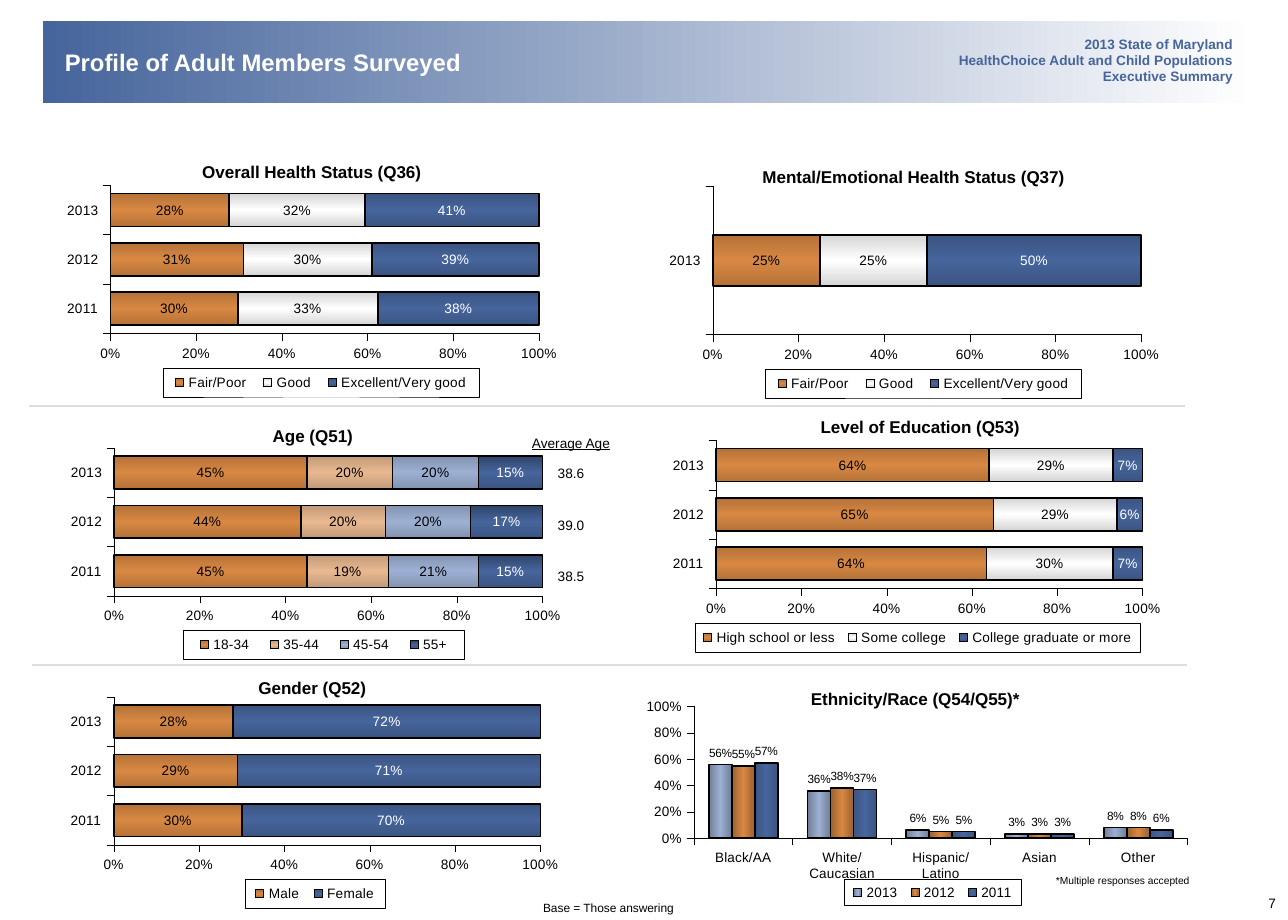
from dataclasses import dataclass
from lxml import etree
from pptx import Presentation
from pptx.chart.data import CategoryChartData
from pptx.dml.color import RGBColor
from pptx.enum.chart import XL_CHART_TYPE as ChartType, XL_LABEL_POSITION as LabelPosition
from pptx.enum.chart import XL_LEGEND_POSITION as LegendPosition, XL_TICK_MARK as TickMark
from pptx.enum.shapes import MSO_CONNECTOR as Connector, MSO_SHAPE as ShapeKind
from pptx.enum.text import MSO_ANCHOR as Anchor, PP_ALIGN as Align
from pptx.oxml import parse_xml
from pptx.oxml.ns import nsdecls, qn
from pptx.util import Inches, Pt


@dataclass(frozen=True)
class Theme:
    font: str = "Arial"
    black: str = "000000"
    white: str = "FFFFFF"
    blue: str = "46659C"
    rule: str = "DDDDDD"
    orange: tuple = ("B57238", "D88843", "B57238")
    burnt: tuple = ("9B6130", "D88843", "9B6130")
    peach: tuple = ("C29A78", "E8B890", "C29A78")
    silver: tuple = ("D5D5D5", "FFFFFF", "D5D5D5")
    sky: tuple = ("8393B0", "9DB0D3", "8393B0")
    slate: tuple = ("707E97", "9DB0D3", "707E97")
    navy: tuple = ("3B5482", "46659C", "3B5482")
    deep: tuple = ("2E4367", "46659C", "3B5482")
    title: int = 14
    heading: int = 10
    body: int = 8
    small: int = 7
    note: int = 6


theme = Theme()
presentation = Presentation()
presentation.slide_width, presentation.slide_height = Inches(10.5), Inches(7.5)
slide = presentation.slides.add_slide(presentation.slide_layouts[6])
column, row = presentation.slide_width / 105, presentation.slide_height / 75


def area(left, top, width, height):
    return [round(size) for size in (left * column, top * row, width * column, height * row)]


def paint_gradient(fill, properties, colors, angle):
    fill.gradient()
    gradient = properties.find(qn("a:gradFill"))
    stops = gradient.find(qn("a:gsLst"))
    stops.clear()
    for index, color in enumerate(colors):
        stop = etree.SubElement(stops, qn("a:gs"), pos=str(index * 100000 // (len(colors) - 1)))
        etree.SubElement(stop, qn("a:srgbClr"), val=color)
    gradient.find(qn("a:lin")).set("ang", str(angle * 60000))


banner = slide.shapes.add_shape(ShapeKind.RECTANGLE, *area(3.5, 1.7, 98.9, 6.7))
banner.shadow.inherit = False
banner.line.fill.background()
paint_gradient(banner.fill, banner._element.spPr, (theme.blue, theme.white), 0)

years = ("2011", "2012", "2013")
health_names = ("Fair/Poor", "Good", "Excellent/Very good")
three_tones = (theme.orange, theme.silver, theme.navy)
standard_plot = (0.12, 0.006, 0.82, 0.686)
charts = [
    ((53.3, 35.8, 42.4), years, 50, standard_plot, (0.079, 0.852, 0.857, 0.134),
     ("High school or less", "Some college", "College graduate or more"), three_tones,
     ((0.64, 0.65, 0.64), (0.3, 0.29, 0.29), (0.07, 0.06, 0.07))),
    ((4.2, 36.4, 42.6), years, 50, standard_plot, (0.253, 0.852, 0.536, 0.134),
     ("18-34", "35-44", "45-54", "55+"), (theme.orange, theme.peach, theme.sky, theme.deep),
     ((0.45, 0.44, 0.45), (0.19, 0.2, 0.2), (0.21, 0.2, 0.2), (0.15, 0.17, 0.15))),
    ((4.2, 56.7, 42.4), years, 50, standard_plot, (0.372, 0.852, 0.269, 0.134),
     ("Male", "Female"), (theme.orange, theme.navy),
     ((0.3, 0.29, 0.28), (0.7, 0.71, 0.72))),
    ((52.7, 56.4, 44.3), ("Black/AA", "White/ Caucasian", "Hispanic/Latino", "Asian", "Other"),
     130, (0.077, 0.068, 0.919, 0.61), (0.357, 0.87, 0.33, 0.12),
     ("2013", "2012", "2011"), (theme.slate, theme.burnt, theme.navy),
     ((0.56, 0.36, 0.06, 0.03, 0.08), (0.55, 0.38, 0.05, 0.03, 0.08),
      (0.57, 0.37, 0.05, 0.03, 0.06))),
    ((3.9, 15, 42.6), years, 50, standard_plot, (0.22, 0.852, 0.606, 0.134),
     health_names, three_tones,
     ((0.3, 0.31, 0.28), (0.33, 0.3, 0.32), (0.38, 0.39, 0.41))),
    ((53, 15.1, 42.6), ("2013",), 188, standard_plot, (0.22, 0.852, 0.606, 0.134),
     health_names, three_tones, ((0.25,), (0.25,), (0.5,))),
]
for place, categories, gap, plot_box, legend_box, names, tones, values in charts:
    stacked = len(categories) < 5
    data = CategoryChartData(number_format="0%")
    data.categories = categories
    for name, shares in zip(names, values):
        data.add_series(name, shares)
    kind = ChartType.BAR_STACKED_100 if stacked else ChartType.COLUMN_CLUSTERED
    chart = slide.shapes.add_chart(kind, *area(*place, 17.6), data).chart
    chart.has_title = False
    chart.font.name, chart.font.size = theme.font, Pt(theme.body)
    chart.font.color.rgb = RGBColor.from_string(theme.black)
    plot = chart.plots[0]
    plot.gap_width, plot.vary_by_categories = gap, False
    if stacked:
        plot.overlap = 100
    for axis in (chart.category_axis, chart.value_axis):
        axis.has_major_gridlines = False
        axis.major_tick_mark, axis.minor_tick_mark = TickMark.OUTSIDE, TickMark.NONE
        axis.format.line.width = Pt(0.25)
        axis.format.line.color.rgb = RGBColor.from_string(theme.black)
    axis.minimum_scale, axis.maximum_scale, axis.major_unit = 0, 1, 0.2
    axis.tick_labels.number_format = "0%"
    axis.tick_labels.number_format_is_linked = False

    for series, tone in zip(plot.series, tones):
        series.invert_if_negative = False
        series.format.line.width = Pt(1)
        series.format.line.color.rgb = RGBColor.from_string(theme.black)
        paint_gradient(series.format.fill, series._element.spPr, tone, 90 if stacked else 0)
        labels = series.data_labels
        labels.show_value = True
        labels.number_format, labels.number_format_is_linked = "0%", False
        labels.position = LabelPosition.CENTER if stacked else LabelPosition.OUTSIDE_END
        light = stacked and tone in (theme.navy, theme.deep)
        labels.font.name = theme.font
        labels.font.size = Pt(theme.body if stacked else theme.small)
        labels.font.color.rgb = RGBColor.from_string(theme.white if light else theme.black)

    chart.has_legend = True
    legend = chart.legend
    legend.position, legend.include_in_layout = LegendPosition.BOTTOM, False
    legend.font.name, legend.font.size = theme.font, Pt(theme.body)
    legend._element.find(qn("c:overlay")).addnext(parse_xml(
        f'<c:spPr {nsdecls("c", "a")}><a:solidFill><a:srgbClr val="{theme.white}"/></a:solidFill>'
        f'<a:ln w="3175"><a:solidFill><a:srgbClr val="{theme.black}"/></a:solidFill></a:ln></c:spPr>'))
    plot_area = chart._chartSpace.chart.plotArea
    for parent, index, box in ((plot_area, 0, plot_box), (legend._element, 1, legend_box)):
        for unused in parent.findall(qn("c:layout")):
            parent.remove(unused)
        layout = etree.Element(qn("c:layout"))
        manual = etree.SubElement(layout, qn("c:manualLayout"))
        if parent is plot_area:
            etree.SubElement(manual, qn("c:layoutTarget"), val="inner")
        for mode in ("xMode", "yMode"):
            etree.SubElement(manual, qn(f"c:{mode}"), val="edge")
        for side, share in zip("xywh", box):
            etree.SubElement(manual, qn(f"c:{side}"), val=str(share))
        parent.insert(index, layout)

headings = [
    ("Overall Health Status (Q36)", 15.4, 12.7, 20),
    ("Mental/Emotional Health Status (Q37)", 61, 13.1, 26.9),
    ("Age (Q51)", 21.2, 34.2, 8.6),
    ("Level of Education (Q53)", 65.8, 33.5, 18.4),
    ("Gender (Q52)", 20, 54.7, 10.9),
    ("Ethnicity/Race (Q54/Q55)*", 65, 55.6, 19.2),
]
texts = [((left, top, width, 2.7), text, theme.heading, theme.black, True, Align.CENTER, False)
         for text, left, top, width in headings]
texts += [
    ((4.3, 1.7, 60, 6.7), "Profile of Adult Members Surveyed",
     theme.title, theme.white, True, Align.LEFT, True),
    ((76.6, 2.4, 24.9, 5),
     "2013 State of Maryland\nHealthChoice Adult and Child Populations\nExecutive Summary",
     theme.body, theme.blue, True, Align.RIGHT, False),
    ((85.1, 70.8, 13.4, 2), "*Multiple responses accepted",
     theme.note, theme.black, False, Align.LEFT, False),
    ((34.2, 72.9, 30.8, 2.1), "Base = Those answering",
     theme.small, theme.black, False, Align.CENTER, True),
    ((99.8, 72.5, 5.2, 2.3), "7", theme.body, theme.black, False, Align.RIGHT, True),
]
for box, text, size, color, bold, alignment, wrap in texts:
    frame = slide.shapes.add_textbox(*area(*box)).text_frame
    frame.text, frame.word_wrap = text, wrap
    frame.vertical_anchor = Anchor.MIDDLE if size == theme.title else Anchor.TOP
    for paragraph in frame.paragraphs:
        paragraph.alignment = alignment
        font = paragraph.runs[0].font
        font.name, font.size, font.bold = theme.font, Pt(size), bold
        font.color.rgb = RGBColor.from_string(color)

ages = ("Average Age", "38.6", "39.0", "38.5", "")
table = slide.shapes.add_table(len(ages), 1, *area(42.3, 33.1, 8.5, 20.9)).table
table.first_row = table.horz_banding = False
table._tbl.tblPr.find(qn("a:tableStyleId")).text = "{2D5ABB26-0587-4C30-8999-92F81FD0307C}"
for index, age in enumerate(ages):
    cell = table.cell(index, 0)
    cell.fill.background()
    cell.margin_left = cell.margin_right = round(column / 2)
    cell.vertical_anchor = Anchor.TOP if index else Anchor.BOTTOM
    cell.text = age
    paragraph = cell.text_frame.paragraphs[0]
    paragraph.alignment, paragraph.line_spacing = Align.CENTER, 1.2
    paragraph.space_after = Pt(1.6)
    paragraph.font.size = Pt(theme.body)
    for run in paragraph.runs:
        run.font.name, run.font.size = theme.font, Pt(theme.body)
        run.font.underline = index == 0
        run.font.color.rgb = RGBColor.from_string(theme.black)

for left, top in ((2.4, 33.1), (2.6, 54.2)):
    start_x, start_y, length, _ = area(left, top, 94.2, 0)
    divider = slide.shapes.add_connector(
        Connector.STRAIGHT, start_x, start_y, start_x + length, start_y)
    divider.line.width = Pt(1)
    divider.line.color.rgb = RGBColor.from_string(theme.rule)
    etree.SubElement(divider._element.spPr, qn("a:effectLst"))

presentation.save("out.pptx")
